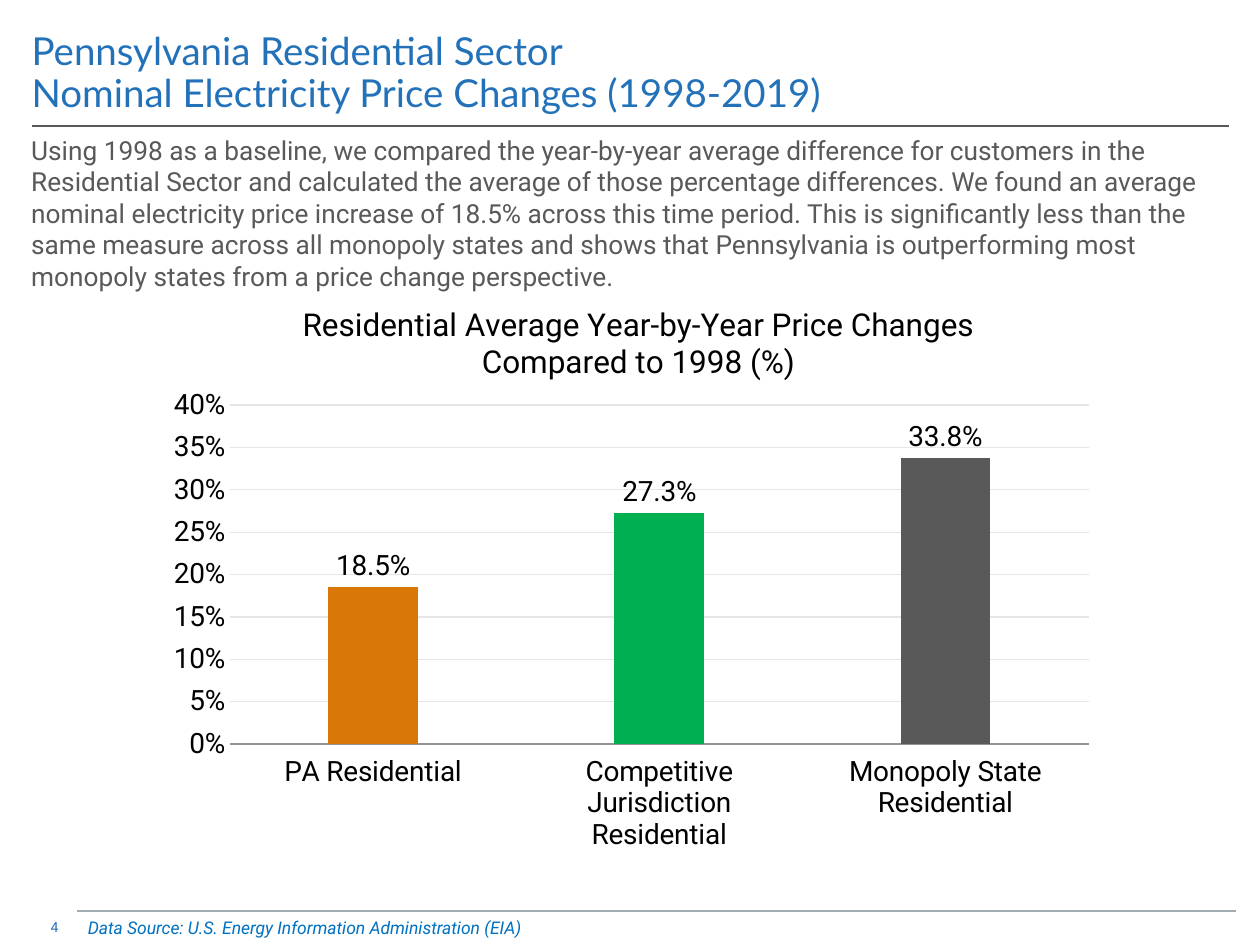
import pptx
import pptx.chart.data
import pptx.dml.color
import pptx.enum.chart
import pptx.enum.shapes
import pptx.enum.text
import pptx.oxml.ns
import pptx.oxml.xmlchemy
import pptx.util

BLUE = pptx.dml.color.RGBColor(0x23, 0x72, 0xB9)
SOURCE_BLUE = pptx.dml.color.RGBColor(0x00, 0x70, 0xC0)
GRAY = pptx.dml.color.RGBColor(0x59, 0x59, 0x59)
FOOTER_GRAY = pptx.dml.color.RGBColor(0xA1, 0xAD, 0xB5)
AXIS_GRAY = pptx.dml.color.RGBColor(0x93, 0x93, 0x93)
GRID_GRAY = pptx.dml.color.RGBColor(0xE6, 0xE6, 0xE6)
ORANGE = pptx.dml.color.RGBColor(0xD8, 0x76, 0x06)
GREEN = pptx.dml.color.RGBColor(0x00, 0xB0, 0x50)
BLACK = pptx.dml.color.RGBColor(0x00, 0x00, 0x00)

TITLE = "Pennsylvania Residential Sector\nNominal Electricity Price Changes (1998-2019)"
BODY = (
    "Using 1998 as a baseline, we compared the year-by-year average difference for customers "
    "in the Residential Sector and calculated the average of those percentage differences. "
    "We found an average nominal electricity price increase of 18.5% across this time period. "
    "This is significantly less than the same measure across all monopoly states and shows that "
    "Pennsylvania is outperforming most monopoly states from a price change perspective."
)
SOURCE = "Data Source: U.S. Energy Information Administration (EIA)"
CHART_TITLE = "Residential Average Year-by-Year Price Changes Compared to 1998 (%)"
PRICES = {
    "PA Residential": (0.185, ORANGE),
    "Competitive Jurisdiction Residential": (0.273, GREEN),
    "Monopoly State Residential": (0.338, GRAY),
}


class Deck:
    """Style and current slide, with one method per kind of element."""

    def __init__(self, width, height):
        self.prs = pptx.Presentation()
        self.apply(self.prs, {
            "slide_width": pptx.util.Cm(width), "slide_height": pptx.util.Cm(height)})
        self.slide = self.prs.slides.add_slide(self.prs.slide_layouts[6])

    def apply(self, target, values):
        for name, value in values.items():
            setattr(target, name, value)

    def font(self, font, size, color=BLACK, name="Roboto", italic=False):
        self.apply(font, {
            "size": pptx.util.Pt(size), "name": name, "bold": False, "italic": italic})
        font.color.rgb = color

    def text(self, text, box, size, color, inset=(0, 0), middle=False, para=None, **style):
        sp = self.slide.shapes.add_textbox(*map(pptx.util.Cm, box))
        tf = sp.text_frame
        x, y = map(pptx.util.Cm, inset)
        anchor = pptx.enum.text.MSO_ANCHOR
        self.apply(tf, {
            "word_wrap": True,
            "margin_left": x, "margin_right": x, "margin_top": y, "margin_bottom": y,
            "vertical_anchor": anchor.MIDDLE if middle else anchor.TOP,
        })
        p = tf.paragraphs[0]
        p.text = text
        self.apply(p, para or {})
        for r in p.runs:
            self.font(r.font, size, color, **style)

    def line(self, left, right, y, color):
        straight = pptx.enum.shapes.MSO_CONNECTOR.STRAIGHT
        sp = self.slide.shapes.add_connector(
            straight, *map(pptx.util.Cm, (left, y, right, y)))
        sp.line.color.rgb, sp.line.width = color, pptx.util.Pt(1)
        sp._element.spPr.append(pptx.oxml.xmlchemy.OxmlElement("a:effectLst"))

    def layout(self, parent, index, **values):
        for old in parent.findall(pptx.oxml.ns.qn("c:layout")):
            parent.remove(old)
        layout = pptx.oxml.xmlchemy.OxmlElement("c:layout")
        manual = pptx.oxml.xmlchemy.OxmlElement("c:manualLayout")
        layout.append(manual)
        for name, value in values.items():
            item = pptx.oxml.xmlchemy.OxmlElement(f"c:{name}")
            item.set("val", str(value))
            manual.append(item)
        parent.insert(index, layout)

    def column_chart(self, title, prices, box):
        enum = pptx.enum.chart
        data = pptx.chart.data.CategoryChartData(number_format="0.0%")
        data.categories = list(prices)
        data.add_series("Series 1", [value for value, _ in prices.values()])
        chart = self.slide.shapes.add_chart(
            enum.XL_CHART_TYPE.COLUMN_CLUSTERED, *map(pptx.util.Cm, box), data).chart
        chart.has_legend = False
        self.font(chart.font, 10)

        p = chart.chart_title.text_frame.paragraphs[0]
        p.text = title
        self.font(p.runs[0].font, 18)
        self.layout(chart.chart_title._element, 1, xMode="edge", yMode="edge", x=0.15, y=0.05)

        none = enum.XL_TICK_MARK.NONE
        for axis in (chart.category_axis, chart.value_axis):
            self.apply(axis, {"major_tick_mark": none, "minor_tick_mark": none})
            self.font(axis.tick_labels.font, 16)
        chart.category_axis.tick_label_position = enum.XL_TICK_LABEL_POSITION.LOW
        self.apply(chart.value_axis, {
            "minimum_scale": 0, "maximum_scale": 0.4, "major_unit": 0.05,
            "has_major_gridlines": True})
        self.apply(chart.value_axis.tick_labels, {
            "number_format": "0%", "number_format_is_linked": False})
        chart.value_axis.format.line.fill.background()
        for line, color in ((chart.category_axis.format.line, AXIS_GRAY),
                            (chart.value_axis.major_gridlines.format.line, GRID_GRAY)):
            line.color.rgb, line.width = color, pptx.util.Pt(0.75)

        plot = chart.plots[0]
        self.apply(plot, {"gap_width": 219, "overlap": -27, "vary_by_categories": False,
                          "has_data_labels": True})
        self.apply(plot.data_labels, {
            "show_value": True, "number_format": "0.0%", "number_format_is_linked": False,
            "position": enum.XL_LABEL_POSITION.OUTSIDE_END})
        self.font(plot.data_labels.font, 16)
        for i, (_, color) in enumerate(prices.values()):
            fill = plot.series[0].points[i].format.fill
            fill.solid()
            fill.fore_color.rgb = color
        self.layout(chart._chartSpace.chart.plotArea, 0, layoutTarget="inner", xMode="edge",
                    yMode="edge", x=0.08, y=0.23, w=0.9, h=0.57)


def main():
    deck = Deck(25.4, 19.05)
    deck.line(1.55, 24.92, 18.36, FOOTER_GRAY)
    deck.text("4", (1.02, 18.39, 0.94, 0.58), 8, BLUE, middle=True)
    deck.text(TITLE, (0.64, 0.48, 23.37, 2.03), 22, BLUE, middle=True, name="Lato",
              para={"line_spacing": 0.9})
    deck.text(BODY, (0.38, 2.57, 24.87, 3.45), 15, GRAY, inset=(0.25, 0.13))
    deck.line(0.64, 24.77, 2.54, GRAY)
    deck.text(SOURCE, (1.52, 18.39, 23.39, 0.66), 10, SOURCE_BLUE, inset=(0.25, 0.13),
              italic=True, para={"line_spacing": 0.95, "space_before": pptx.util.Pt(6)})
    deck.column_chart(CHART_TITLE, PRICES, (3.1, 5.41, 19.23, 11.99))
    deck.prs.save("out.pptx")


if __name__ == "__main__":
    main()
